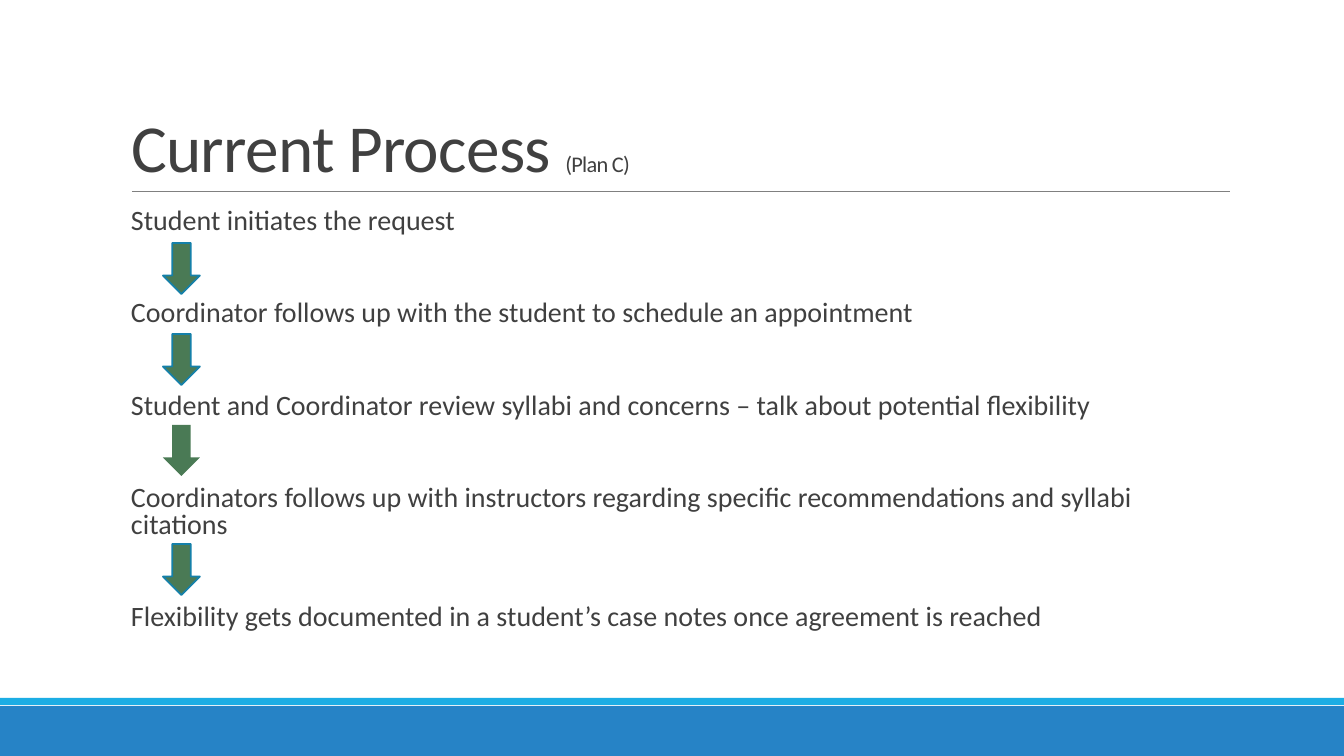
from dataclasses import dataclass

from pptx import Presentation
from pptx.dml.color import RGBColor as RGB
from pptx.enum.shapes import MSO_CONNECTOR as Line, MSO_SHAPE as Shape
from pptx.enum.text import MSO_ANCHOR as Anchor, MSO_AUTO_SIZE as Fit, PP_ALIGN as Align
from pptx.oxml.ns import qn
from pptx.util import Pt
from lxml.etree import SubElement as Sub

SCALE = 914400 / 100.8  # EMU in one px


@dataclass(frozen=True)
class Theme:
    font: str = "Calibri"
    ink: str = "404040"
    rule: str = "808080"
    band: str = "2683C6"
    strip: str = "1CADE4"
    arrow: str = "4A7A55"
    edge: str = "1580A9"
    head: int = 48
    note: int = 16
    body: int = 20


THEME = Theme()

STEPS = [
    "Student initiates the request",
    "Coordinator follows up with the student to schedule an appointment",
    "Student and Coordinator review syllabi and concerns – talk about potential flexibility",
    "Coordinators follows up with instructors regarding specific recommendations and syllabi citations",
    "Flexibility gets documented in a student’s case notes once agreement is reached",
]
# Top of each arrow, and whether it is outlined
ARROWS = [(243, True), (334, True), (425, False), (544, True)]


def px(n):
    return round(n * SCALE)


def place(item, x, y, w, h):
    item.left, item.top, item.width, item.height = map(px, (x, y, w, h))


def add_run(para, text, size):
    run = para.add_run()
    run.text = text
    font = run.font
    font.name, font.size = THEME.font, Pt(size)
    font.color.rgb = RGB.from_string(THEME.ink)
    return run


def add_block(slide, kind, box, fill, edge=None):
    block = slide.shapes.add_shape(kind, *map(px, box))
    block.shadow.inherit = False
    block.fill.solid()
    block.fill.fore_color.rgb = RGB.from_string(fill)
    if edge:
        block.line.color.rgb = RGB.from_string(edge)
        block.line.width = Pt(1.25)
    else:
        block.line.fill.background()


def add_rule(slide, x1, x2, y):
    rule = slide.shapes.add_connector(Line.STRAIGHT, px(x1), px(y), px(x2), px(y))
    rule.line.color.rgb = RGB.from_string(THEME.rule)
    rule.line.width = Pt(0.5)
    Sub(rule._element.spPr, qn("a:effectLst"))


def fill_title(title):
    place(title, 121, 31, 1109, 160)
    frame = title.text_frame
    frame.auto_size, frame.vertical_anchor = Fit.NONE, Anchor.BOTTOM
    para = frame.paragraphs[0]
    para.alignment, para.line_spacing = Align.LEFT, 0.85
    for text, size in (("Current Process ", THEME.head), ("(Plan C)", THEME.note)):
        run = add_run(para, text, size)
        run.font._element.set("spc", "-50")


def fill_steps(body):
    place(body, 121, 204, 1109, 456)
    frame = body.text_frame
    frame.auto_size, frame.word_wrap = Fit.NONE, True
    frame.margin_left = frame.margin_right = 0
    for i, step in enumerate(STEPS):
        para = frame.add_paragraph() if i else frame.paragraphs[0]
        para.line_spacing = 0.8
        # The gap leaves room for the arrow between two steps
        para.space_before = Pt(44.7 if i else 0)
        para.space_after = Pt(2)
        props = para._element.get_or_add_pPr()
        props.set("marL", str(px(10)))
        props.set("indent", "0")
        Sub(props, qn("a:buNone"))
        add_run(para, step, THEME.body)


def main():
    deck = Presentation()
    deck.slide_width, deck.slide_height = px(1344), px(756)
    slide = deck.slides.add_slide(deck.slide_layouts[1])

    # Footer bands and title rule
    add_block(slide, Shape.RECTANGLE, (0, 706, 1344, 50), THEME.band)
    add_block(slide, Shape.RECTANGLE, (0, 698, 1344, 7), THEME.strip)
    add_rule(slide, 132, 1230, 191)

    # Title and steps
    fill_title(slide.shapes.title)
    fill_steps(slide.placeholders[1])

    # Arrows between the steps
    for top, lined in ARROWS:
        edge = THEME.edge if lined else None
        add_block(slide, Shape.DOWN_ARROW, (163, top, 37, 51), THEME.arrow, edge)

    deck.save("out.pptx")


if __name__ == "__main__":
    main()
